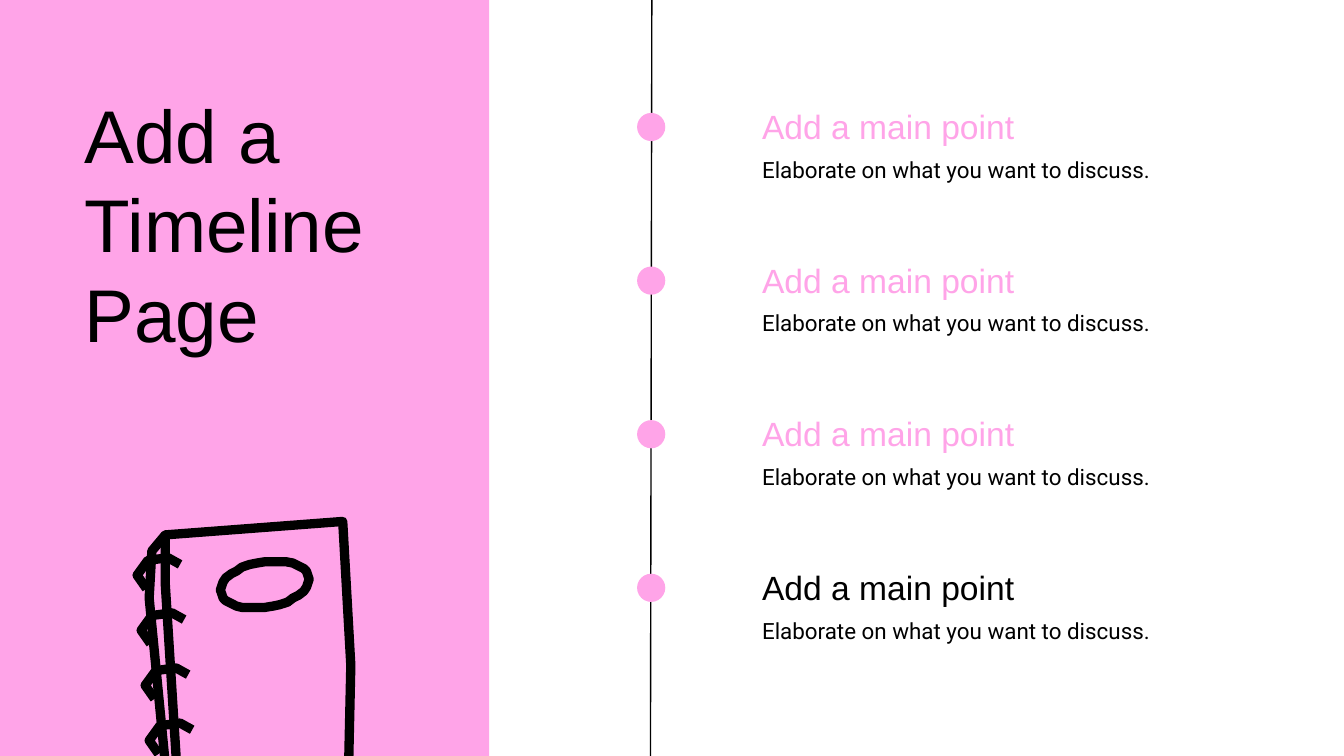
from math import cos, pi, sin

from pptx import Presentation
from pptx.dml.color import RGBColor
from pptx.enum.shapes import MSO_CONNECTOR as Link, MSO_SHAPE as Kind
from pptx.oxml.ns import qn
from pptx.util import Inches, Pt

PINK = RGBColor(0xFF, 0xA4, 0xE8)
BLACK = RGBColor(0, 0, 0)

# Grid of 100 columns by 56.25 rows, each a tenth of an inch
COLS, ROWS = 100, 56.25
UNIT = Inches(0.1)

HEAD = {"size": Pt(18), "name": "Arial"}
BODY = {"size": Pt(12), "name": "Roboto"}
TITLE = {"size": Pt(40), "name": "Arial"}

POINTS = [("Add a main point", "Elaborate on what you want to discuss.", color)
          for color in (PINK, PINK, PINK, BLACK)]

# Notebook strokes, in tenths of a column
COVER = [(13, 60), (15, 25), (25, 13), (157, 3), (163, 110), (161, 202),
         (30, 235), (13, 60)]
SPINE = [(25, 13), (25, 50), (36, 225)]
RING = [(0, 0), (-9, -5), (-24, -3), (-32, 8), (-25, 18)]


def grid(*sides):
    return [round(side * UNIT) for side in sides]


def paint(shape, color):
    shape.shadow.inherit = False
    shape.fill.solid()
    shape.fill.fore_color.rgb = color
    shape.line.fill.background()


def write(slide, box, text, style, color):
    frame = slide.shapes.add_textbox(*grid(*box)).text_frame
    frame.word_wrap = True
    for side in ("left", "top", "right", "bottom"):
        setattr(frame, f"margin_{side}", 0)
    para = frame.paragraphs[0]
    para.line_spacing = Pt(style["size"].pt * 1.2)
    run = para.add_run()
    run.text = text
    for key, value in style.items():
        setattr(run.font, key, value)
    run.font.color.rgb = color


def draw_book(slide, left, top):
    # Binding rings step down the spine; the label is a tilted oval
    rings = [[(36 + 3 * i + x, 35 + 41 * i + y) for x, y in RING]
             for i in range(5)]
    turns = [2 * pi * i / 36 for i in range(37)]
    label = [(99 + 33 * cos(t), 50 + 17 * sin(t) - 4 * cos(t)) for t in turns]
    pen = slide.shapes.build_freeform(*COVER[0], scale=UNIT / 10)
    for stroke in [COVER, SPINE, label, *rings]:
        pen.move_to(*stroke[0])
        pen.add_line_segments(stroke[1:], close=False)
    book = pen.convert_to_shape(*grid(left, top))
    book.shadow.inherit = False
    book.fill.background()
    book.line.color.rgb = BLACK
    book.line.width = Pt(5)


def draw_panel(slide, left, top, width, height):
    panel = slide.shapes.add_shape(
        Kind.RECTANGLE, *grid(left, top, width, height))
    paint(panel, PINK)
    write(slide, (left + 6.3, top + 6.6, 23.8, 20.2),
          "Add a Timeline Page", TITLE, BLACK)
    draw_book(slide, left + 9.8, top + 38.5)


def draw_point(slide, left, top, point):
    head, body, color = point
    dot = slide.shapes.add_shape(Kind.OVAL, *grid(left, top + 0.5, 2.1, 2.1))
    paint(dot, PINK)
    write(slide, (left + 9.3, top, 33.9, 3), head, HEAD, color)
    write(slide, (left + 9.3, top + 3.7, 33.9, 2), body, BODY, BLACK)


def draw_time(slide, left, top, height):
    # Axis, leaning slightly to the right at the top
    axis = slide.shapes.add_connector(
        Link.STRAIGHT, *grid(left + 1, top + height, left + 1.1, top))
    axis.line.color.rgb = BLACK
    axis.line.width = Pt(0.75)
    props = axis._element.spPr
    props.append(props.makeelement(qn("a:effectLst"), {}))
    # Evenly spaced points
    for row, point in enumerate(POINTS):
        draw_point(slide, left, top + 7.9 + row * 11.43, point)


def main():
    deck = Presentation()
    deck.slide_width, deck.slide_height = grid(COLS, ROWS)
    slide = deck.slides.add_slide(deck.slide_layouts[6])
    draw_panel(slide, 0, 0, 36.4, ROWS)
    draw_time(slide, 47.4, 0, ROWS)
    deck.save("out.pptx")


if __name__ == "__main__":
    main()
